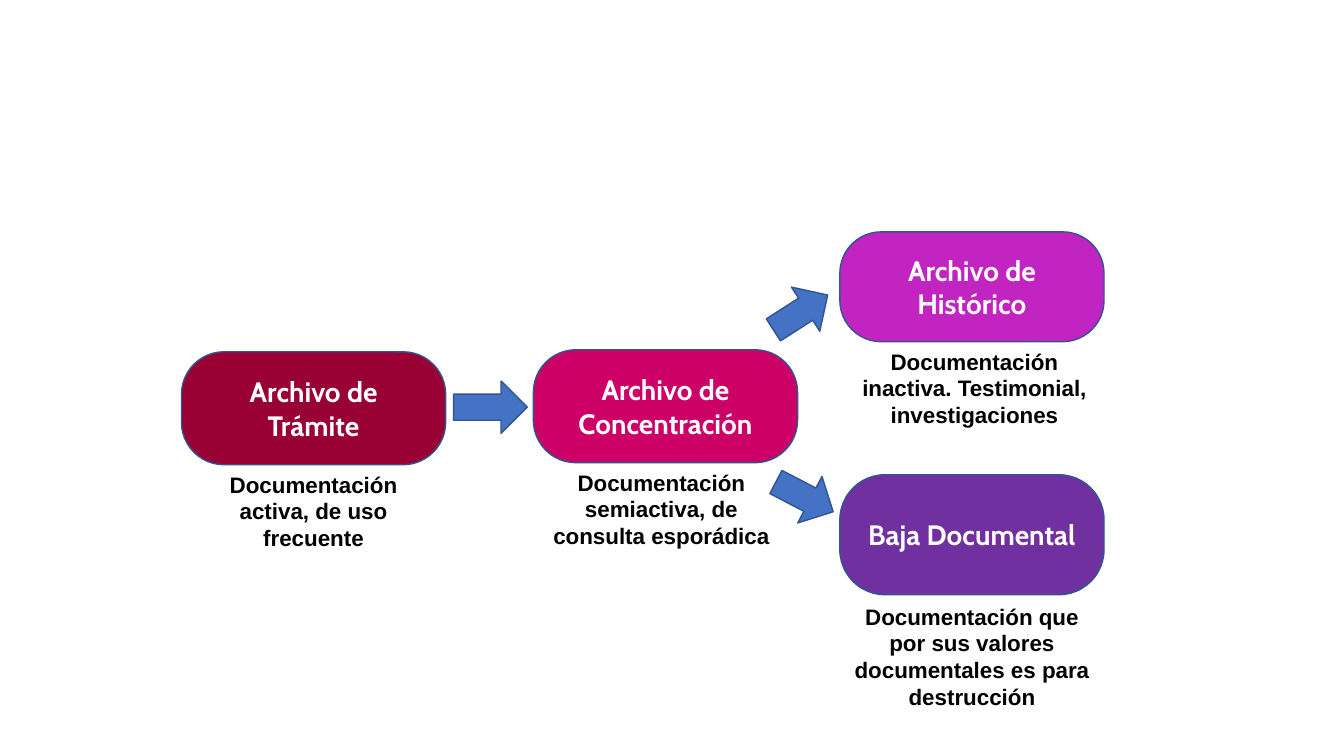
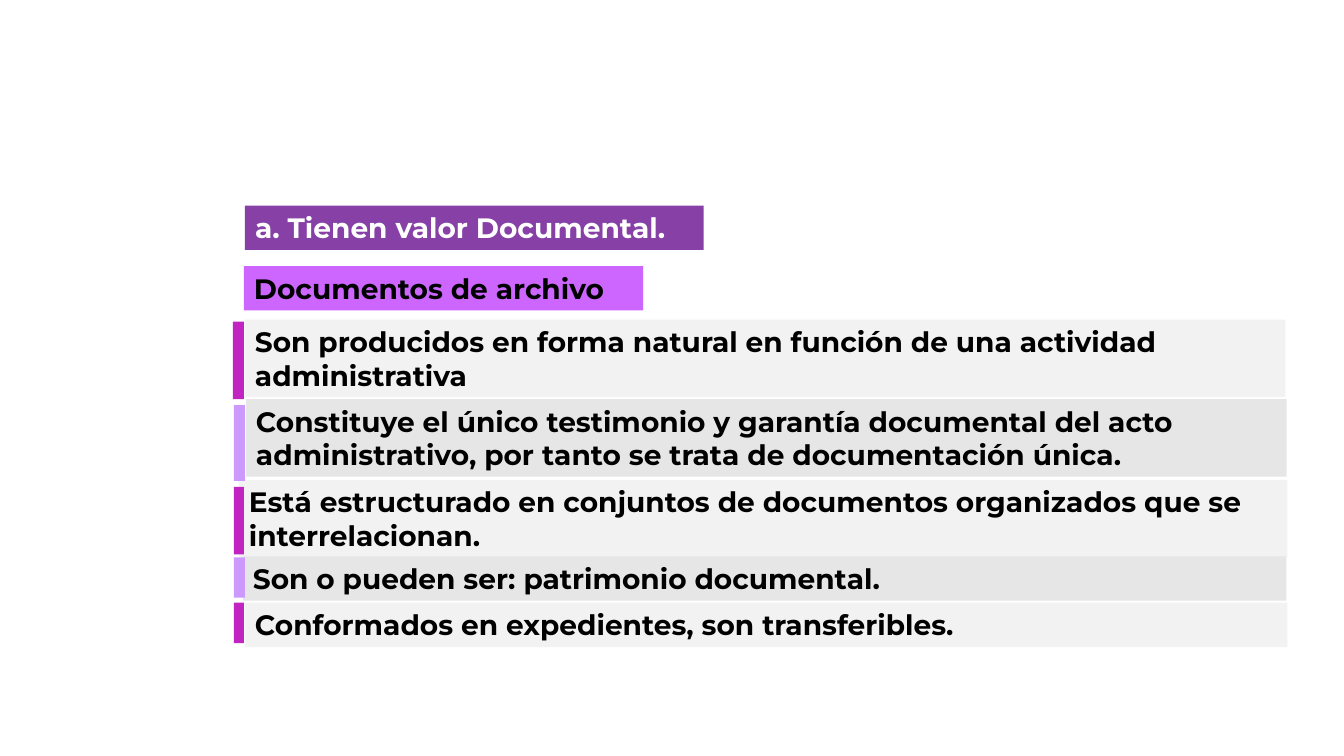
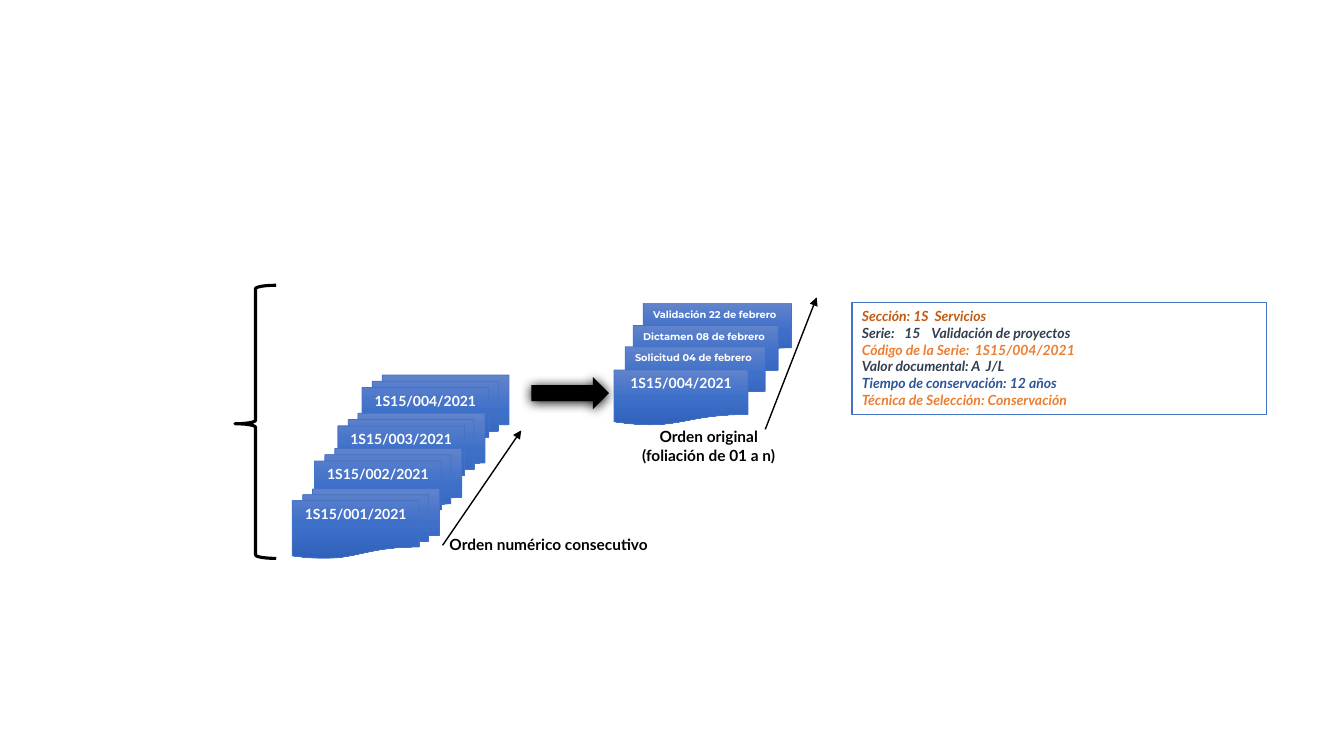
from copy import deepcopy

from pptx import Presentation
from pptx.dml.color import RGBColor
from pptx.enum.shapes import MSO_CONNECTOR, MSO_SHAPE
from pptx.enum.text import MSO_ANCHOR, PP_ALIGN
from pptx.oxml import parse_xml
from pptx.oxml.ns import nsdecls, qn
from pptx.util import Inches, Pt

WHITE = RGBColor(0xFF, 0xFF, 0xFF)
BLACK = RGBColor(0x00, 0x00, 0x00)
BLUE = RGBColor(0x44, 0x72, 0xC4)
EDGE = RGBColor(0x32, 0x54, 0x91)
WINE = RGBColor(0x99, 0x00, 0x33)
PINK = RGBColor(0xCC, 0x00, 0x66)
MAGENTA = RGBColor(0xC2, 0x24, 0xC2)
PURPLE = RGBColor(0x70, 0x30, 0xA0)
VIOLET = RGBColor(0x86, 0x40, 0xA6)
ORCHID = RGBColor(0xCC, 0x66, 0xFF)
LILAC = RGBColor(0xCC, 0x99, 0xFF)
PALE = RGBColor(0xF2, 0xF2, 0xF2)
GRAY = RGBColor(0xE7, 0xE6, 0xE6)
RUST = RGBColor(0xC5, 0x5A, 0x11)
SLATE = RGBColor(0x33, 0x3F, 0x50)
ORANGE = RGBColor(0xED, 0x7D, 0x31)
NAVY = RGBColor(0x2F, 0x55, 0x97)
SHEEN = (
    (0, RGBColor(0x61, 0x83, 0xCB)),
    (0.5, RGBColor(0x3E, 0x70, 0xCA)),
    (1, RGBColor(0x30, 0x62, 0xBB)),
)
LEFT, CENTER = PP_ALIGN.LEFT, PP_ALIGN.CENTER
TOP, MIDDLE = MSO_ANCHOR.TOP, MSO_ANCHOR.MIDDLE


class Deck:
    def __init__(self):
        self.show = Presentation()
        self.show.slide_width = Inches(13.33)
        self.show.slide_height = Inches(7.5)
        self.slide = None

    def page(self, layout=6):
        self.slide = self.show.slides.add_slide(self.show.slide_layouts[layout])

    def letter(self, shape, text, font, size, color=WHITE, align=LEFT, anchor=TOP):
        """Set the text of a shape and format it."""
        frame = shape.text_frame
        frame.text = text
        frame.word_wrap = True
        frame.vertical_anchor = anchor
        frame.margin_left = frame.margin_right = Inches(0.1)
        frame.margin_top = frame.margin_bottom = Inches(0.05)
        for para in frame.paragraphs:
            para.alignment = align
            for run in para.runs:
                run.font.name = font
                run.font.size = Pt(size)
                run.font.bold = True
                run.font.color.rgb = color

    def shape(self, kind, at, fill=None, line=None, width=1):
        item = self.slide.shapes.add_shape(kind, *map(Inches, at))
        item.shadow.inherit = False
        if fill is None:
            item.fill.background()
        else:
            item.fill.solid()
            item.fill.fore_color.rgb = fill
        if line is None:
            item.line.fill.background()
        else:
            item.line.color.rgb = line
            item.line.width = Pt(width)
        return item

    def title(self, text, at, fill):
        item = self.slide.shapes.title
        item.left, item.top, item.width, item.height = map(Inches, at)
        item.fill.solid()
        item.fill.fore_color.rgb = fill
        self.letter(item, text, "Montserrat", 20)

    def band(self, text, at, fill):
        item = self.shape(MSO_SHAPE.RECTANGLE, at, fill)
        self.letter(item, text, "Montserrat", 20, BLACK)

    def stage(self, text, at, fill):
        item = self.shape(MSO_SHAPE.ROUNDED_RECTANGLE, at, fill, EDGE)
        item.adjustments[0] = 0.376
        self.letter(item, text, "Cabin", 20, align=CENTER, anchor=MIDDLE)

    def label(self, text, at, font, size, align=CENTER):
        item = self.slide.shapes.add_textbox(*map(Inches, at))
        self.letter(item, text, font, size, BLACK, align)

    def arrow(self, at, turn=0, fill=BLUE, line=EDGE):
        item = self.shape(MSO_SHAPE.RIGHT_ARROW, at, fill, line)
        item.rotation = turn
        return item

    def glow(self, item):
        """Give the shape a soft black shadow just below it."""
        effects = item._element.spPr.find(qn("a:effectLst"))
        effects.append(parse_xml(
            f'<a:outerShdw {nsdecls("a")} blurRad="{Pt(8.5)}" dist="{Pt(1)}" '
            'dir="5400000" algn="ctr" rotWithShape="0">'
            '<a:srgbClr val="000000"/></a:outerShdw>'))

    def sheet(self, kind, text, at, font="Lato", size=10, align=CENTER):
        """Draw a document outline with the blue three-stop gradient."""
        item = self.shape(kind, at, BLUE, BLUE, 0.5)
        item.fill.gradient()
        item.fill.gradient_angle = 270
        stops = item._element.spPr.find(".//" + qn("a:gsLst"))
        stops.append(deepcopy(stops[0]))
        for stop, (place, color) in zip(item.fill.gradient_stops, SHEEN):
            stop.position = place
            stop.color.rgb = color
        self.letter(item, text, font, size, align=align)

    def pointer(self, start, end):
        item = self.slide.shapes.add_connector(
            MSO_CONNECTOR.STRAIGHT, *map(Inches, start + end))
        item.line.color.rgb = BLACK
        item.line.width = Pt(1)
        item.line._get_or_add_ln().append(
            parse_xml(f'<a:tailEnd {nsdecls("a")} type="triangle"/>'))
        item._element.spPr.append(parse_xml(f'<a:effectLst {nsdecls("a")}/>'))

    def card(self, at, rows):
        """Draw a framed list; each row is text, colour and tab stops."""
        item = self.shape(MSO_SHAPE.RECTANGLE, at, line=BLUE)
        self.letter(item, "\n".join(row[0] for row in rows), "Lato", 10)
        for para, (_, color, tabs) in zip(item.text_frame.paragraphs, rows):
            if tabs:
                stops = "".join(
                    f'<a:tab pos="{Inches(tab)}" algn="l"/>' for tab in tabs)
                para._p.get_or_add_pPr().append(
                    parse_xml(f'<a:tabLst {nsdecls("a")}>{stops}</a:tabLst>'))
            for run in para.runs:
                run.font.italic = True
                run.font.color.rgb = color


def cycle(deck):
    deck.page()
    for text, left, top, height, fill in (
        ("Archivo de Trámite", 1.8, 3.49, 1.12, WINE),
        ("Archivo de Concentración", 5.29, 3.47, 1.12, PINK),
        ("Archivo de Histórico", 8.33, 2.3, 1.09, MAGENTA),
        ("Baja Documental", 8.33, 4.71, 1.19, PURPLE),
    ):
        deck.stage(text, (left, top, 2.62, height), fill)
    for left, top, width, turn in (
        (4.5, 3.78, 0.73, 0), (7.62, 2.84, 0.64, -32.7), (7.66, 4.67, 0.64, 27.5),
    ):
        deck.arrow((left, top, width, 0.52), turn)
    for text, at in (
        ("Documentación activa, de uso frecuente", (2.06, 4.62, 2.1, 0.91)),
        ("Documentación semiactiva, de consulta esporádica",
         (5.33, 4.6, 2.46, 0.91)),
        ("Documentación inactiva. Testimonial, investigaciones",
         (8.38, 3.4, 2.57, 0.91)),
        ("Documentación que por sus valores documentales es para destrucción",
         (8.33, 5.93, 2.62, 1.18)),
    ):
        deck.label(text, at, "Arial", 16)


def traits(deck):
    deck.page(5)
    deck.title("a. Tienen valor Documental.", (2.43, 2.04, 4.55, 0.44), VIOLET)
    deck.band("Documentos de archivo", (2.42, 2.64, 3.96, 0.44), ORCHID)
    rows = (
        ("Son producidos en forma natural en función de una actividad "
         "administrativa", (2.43, 3.17, 10.32, 0.77), (2.31, 3.19, 0.11, 0.77)),
        ("Constituye el único testimonio y garantía documental del acto "
         "administrativo, por tanto se trata de documentación única.",
         (2.44, 3.96, 10.32, 0.77), (2.32, 4.02, 0.11, 0.75)),
        ("Está estructurado en conjuntos de documentos organizados que se "
         "interrelacionan.", (2.37, 4.76, 10.4, 0.77), (2.32, 4.83, 0.1, 0.67)),
        ("Son o pueden ser: patrimonio documental.",
         (2.41, 5.52, 10.35, 0.44), (2.32, 5.53, 0.11, 0.4)),
        ("Conformados en expedientes, son transferibles.",
         (2.43, 5.98, 10.34, 0.44), (2.32, 5.98, 0.1, 0.4)),
    )
    for i, (text, at, _) in enumerate(rows):
        deck.band(text, at, (PALE, GRAY)[i % 2])
    for i, (_, _, bar) in enumerate(rows):
        deck.shape(MSO_SHAPE.RECTANGLE, bar, (MAGENTA, LILAC)[i % 2])


def order(deck):
    deck.page()
    for num, left, top, height in (
        (4, 3.59, 3.72, 0.74), (3, 3.35, 4.1, 0.74),
        (2, 3.12, 4.45, 0.73), (1, 2.9, 4.85, 0.69),
    ):
        deck.sheet(MSO_SHAPE.FLOWCHART_MULTIDOCUMENT, f"1S15/00{num}/2021",
                   (left, top, 1.46, height))
    deck.pointer((4.39, 5.41), (5.17, 4.27))
    deck.label("Orden numérico consecutivo", (4.36, 5.26, 2.34, 0.29),
               "Lato", 11, LEFT)
    brace = deck.shape(MSO_SHAPE.LEFT_BRACE, (2.33, 2.83, 0.41, 2.71),
                       line=BLACK, width=2.25)
    brace.adjustments[0] = 0.083
    brace.adjustments[1] = 0.507
    deck.glow(deck.arrow((5.27, 3.74, 0.77, 0.32), fill=BLACK, line=None))
    for text, left, top, width in (
        ("Validación 22 de febrero", 6.38, 3.01, 1.47),
        ("Dictamen 08 de febrero", 6.28, 3.23, 1.44),
        ("Solicitud 04 de febrero", 6.2, 3.44, 1.39),
    ):
        deck.sheet(MSO_SHAPE.FLOWCHART_DOCUMENT, text, (left, top, width, 0.55),
                   "Montserrat", 7, LEFT)
    deck.sheet(MSO_SHAPE.FLOWCHART_DOCUMENT, "1S15/004/2021",
               (6.09, 3.67, 1.33, 0.55))
    deck.pointer((7.59, 4.26), (8.1, 2.95))
    deck.label("Orden original\n(foliación de 01 a n)", (6.21, 4.19, 1.64, 0.47),
               "Lato", 11)
    deck.card((8.45, 3, 4.11, 1.11), (
        ("Sección: 1S\tServicios", RUST, (0.72,)),
        ("Serie:\t15\tValidación de proyectos", SLATE, (0.42, 0.69)),
        ("Código de la Serie:\t1S15/004/2021", ORANGE, (1.12,)),
        ("Valor documental: A\tJ/L", SLATE, (1.23,)),
        ("Tiempo de conservación: 12 años", NAVY, ()),
        ("Técnica de Selección: Conservación", ORANGE, ()),
    ))


def main():
    deck = Deck()
    for build in (cycle, traits, order):
        build(deck)
    deck.show.save("out.pptx")


if __name__ == "__main__":
    main()
